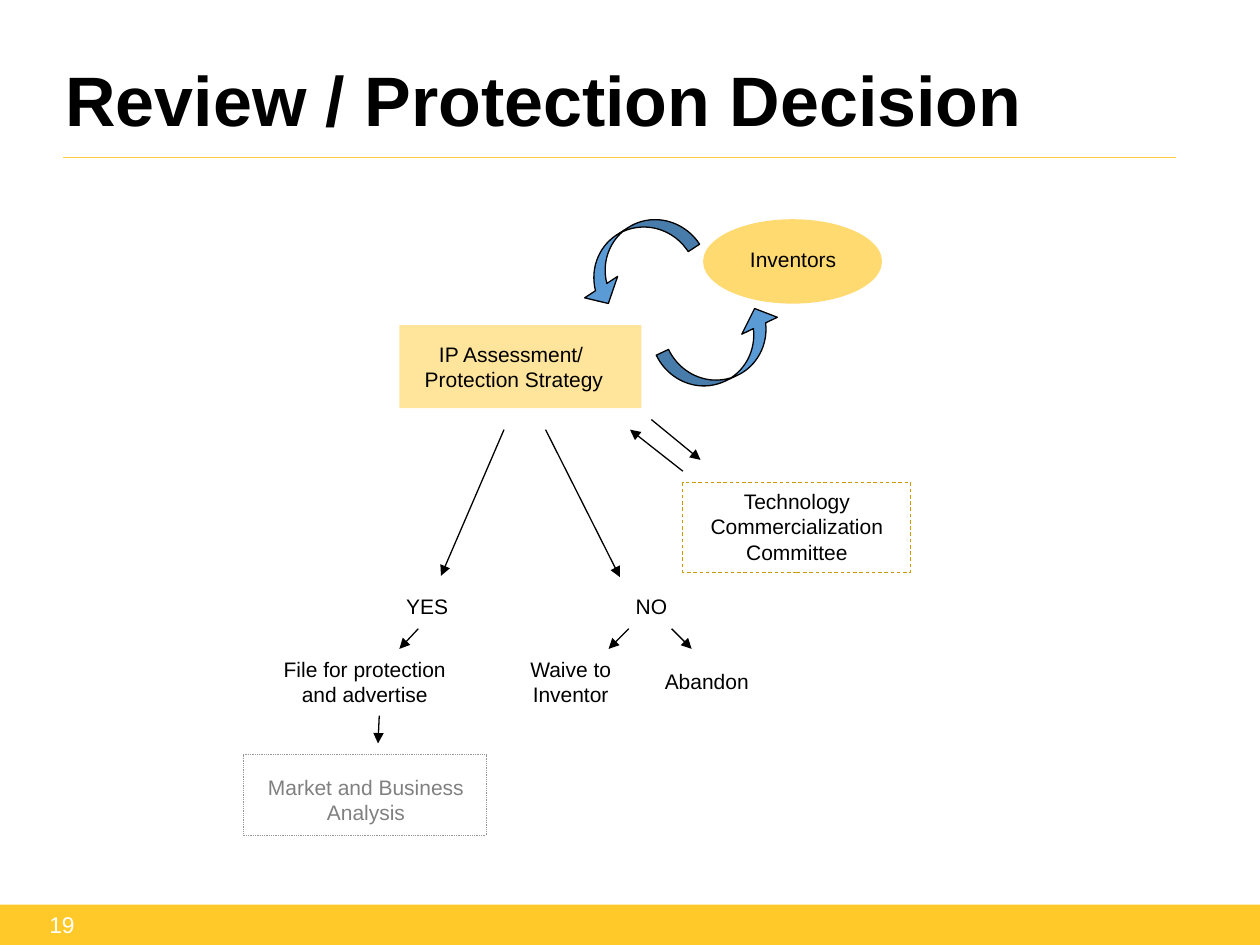
"""Build the review and protection decision flowchart slide."""
from lxml.etree import SubElement
from pptx import Presentation
from pptx.dml.color import RGBColor
from pptx.enum.dml import MSO_LINE as Dash
from pptx.enum.shapes import MSO_CONNECTOR, MSO_SHAPE as Shape
from pptx.enum.text import MSO_ANCHOR as Anchor, PP_ALIGN as Align
from pptx.oxml.ns import qn
from pptx.util import Inches, Pt

COLORS = {
    "black": "000000", "white": "FFFFFF", "gray": "808080", "dotted": "969696",
    "footer": "FFCA29", "rule": "FFCD3F", "strategy": "FFE59B",
    "inventors": "FFDA71", "committee": "CC9900", "loop": "5B9BD5",
}


def write(shape, text, color="black", size=12, align=Align.CENTER, anchor=Anchor.TOP, bold=False):
    frame = shape.text_frame
    frame.word_wrap = True
    frame.vertical_anchor = anchor
    frame.margin_left = frame.margin_right = Inches(0.1)
    frame.margin_top = frame.margin_bottom = Inches(0.05)
    frame.text = text
    for paragraph in frame.paragraphs:
        paragraph.alignment = align
        paragraph.font.name = "Arial"
        paragraph.font.size = Pt(size)
        paragraph.font.bold = bold
        paragraph.font.color.rgb = RGBColor.from_string(COLORS[color])


def connect(start, end, color="black", width=0.75, arrow=True):
    connector = slide.shapes.add_connector(
        MSO_CONNECTOR.STRAIGHT, *[Inches(value) for value in start + end])
    connector.line.color.rgb = RGBColor.from_string(COLORS[color])
    connector.line.width = Pt(width)
    connector.line.dash_style = Dash.SOLID
    if arrow:
        SubElement(connector.line._get_or_add_ln(), qn("a:tailEnd"), type="triangle")
    SubElement(connector._element.spPr, qn("a:effectLst"))


presentation = Presentation()
presentation.slide_width, presentation.slide_height = Inches(10), Inches(7.5)
slide = presentation.slides.add_slide(presentation.slide_layouts[5])

title = slide.shapes.title
title.left, title.top, title.width, title.height = [Inches(value) for value in (0.42, 0.4, 8.83, 0.77)]
write(title, "Review / Protection Decision", size=40, align=Align.LEFT, bold=True)

for kind, box, fill, line, width, dash, rotation, text in [
    (Shape.RECTANGLE, (0, 7.18, 10, 0.32), "footer", None, 0, None, 0, None),
    (Shape.RECTANGLE, (3.17, 2.58, 1.92, 0.66), "strategy", None, 0, None, 0, None),
    (Shape.OVAL, (5.58, 1.74, 1.42, 0.67), "inventors", None, 0, None, 0, None),
    (Shape.RECTANGLE, (5.42, 3.83, 1.81, 0.71), None, "committee", 0.5, Dash.DASH, 0,
     "Technology Commercialization Committee"),
    (Shape.RECTANGLE, (1.93, 5.99, 1.93, 0.64), None, "dotted", 0.5, Dash.ROUND_DOT, 0, None),
    (Shape.CURVED_RIGHT_ARROW, (4.8, 1.53, 0.42, 1.02), "loop", "black", 0.75, None, 57, None),
    (Shape.CURVED_RIGHT_ARROW, (5.55, 2.28, 0.42, 1.02), "loop", "black", 0.75, None, 244.6, None),
]:
    shape = slide.shapes.add_shape(kind, *[Inches(value) for value in box])
    shape.shadow.inherit = False
    shape.rotation = rotation
    if fill:
        shape.fill.solid()
        shape.fill.fore_color.rgb = RGBColor.from_string(COLORS[fill])
    else:
        shape.fill.background()
    if line:
        shape.line.color.rgb = RGBColor.from_string(COLORS[line])
        shape.line.width = Pt(width)
        if dash:
            shape.line.dash_style = dash
    else:
        shape.line.fill.background()
    if kind == Shape.CURVED_RIGHT_ARROW:
        for index, value in enumerate((0.255, 0.745, 0.333)):
            shape.adjustments[index] = value
    if text:
        write(shape, text)

for text, box, color in [
    ("IP Assessment/ \nProtection Strategy", (3.08, 2.66, 2, 0.5), "black"),
    ("Inventors", (5.75, 1.91, 1.09, 0.3), "black"),
    ("YES", (3.08, 4.66, 0.62, 0.3), "black"),
    ("NO", (4.86, 4.66, 0.62, 0.3), "black"),
    ("File for protection and advertise", (2.14, 5.16, 1.51, 0.5), "black"),
    ("Waive to Inventor", (4, 5.16, 1.06, 0.5), "black"),
    ("Abandon", (5.08, 5.26, 1.06, 0.3), "black"),
    ("Market and Business Analysis", (2.02, 6.1, 1.77, 0.5), "gray"),
]:
    label = slide.shapes.add_textbox(*[Inches(value) for value in box])
    write(label, text, color)

for start, end in [
    ((5.17, 3.33), (5.56, 3.65)),
    ((5.42, 3.74), (5, 3.41)),
    ((4, 3.41), (3.5, 4.57)),
    ((4.33, 3.41), (4.92, 4.58)),
    ((3.32, 4.99), (3.17, 5.15)),
    ((4.99, 4.99), (4.83, 5.15)),
    ((5.33, 4.99), (5.49, 5.15)),
    ((3.01, 5.68), (3, 5.9)),
]:
    connect(start, end)

page_number = slide.shapes.add_textbox(Inches(0), Inches(7.18), Inches(0.69), Inches(0.31))
write(page_number, "19", "white", 13, Align.RIGHT, Anchor.MIDDLE)

connect((0.5, 1.25), (9.33, 1.25), "rule", 1, arrow=False)

presentation.save("out.pptx")
